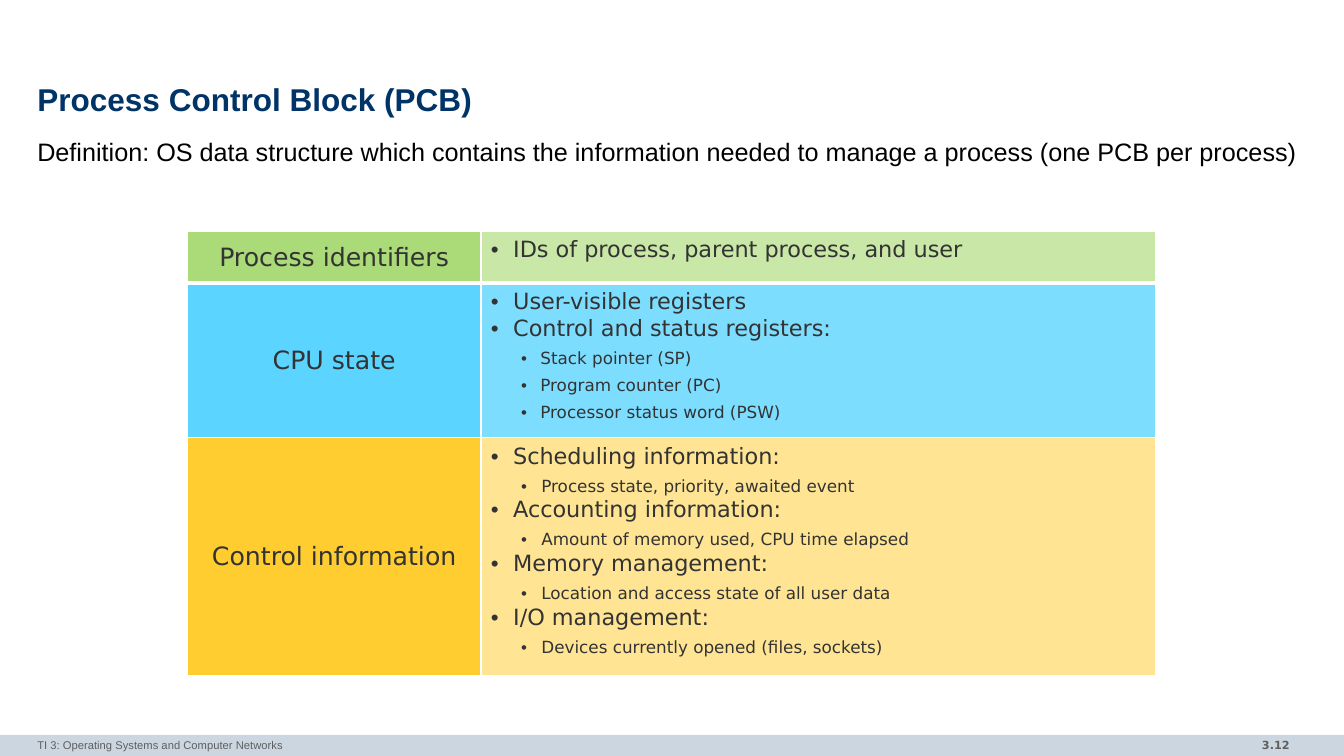
import pptx
import pptx.util
import pptx.dml.color
import pptx.enum.shapes
import pptx.enum.text
import pptx.oxml
import pptx.oxml.ns

ALIGN = pptx.enum.text.PP_ALIGN
ANCHOR = pptx.enum.text.MSO_ANCHOR
WIDE, HIGH = 13.33, 7.5
SANS, TABLE = "Arial", "DejaVu Sans"
INK, GREY, WHITE = "333333", "5F5F5F", "FFFFFF"

# Label, label fill, detail fill, line pitch, sub-item indent, items (level, text)
ROWS = [
    ("Process identifiers", "ABDA78", "C9E7A7", None, 0.49, [
        (0, "IDs of process, parent process, and user")]),
    ("CPU state", "5BD4FF", "7DDDFF", 19.2, 0.49, [
        (0, "User-visible registers"),
        (0, "Control and status registers:"),
        (1, "Stack pointer (SP)"),
        (1, "Program counter (PC)"),
        (1, "Processor status word (PSW)")]),
    ("Control information", "FFCD2F", "FFE593", 19.2, 0.5, [
        (0, "Scheduling information:"),
        (1, "Process state, priority, awaited event"),
        (0, "Accounting information:"),
        (1, "Amount of memory used, CPU time elapsed"),
        (0, "Memory management:"),
        (1, "Location and access state of all user data"),
        (0, "I/O management:"),
        (1, "Devices currently opened (files, sockets)")]),
]
COLS = [2.91, 6.69]
HEIGHTS = [0.51, 1.53, 2.36]


def inch(*sizes):
    return [pptx.util.Inches(size) for size in sizes]


def tint(code):
    return pptx.dml.color.RGBColor.from_string(code)


def paint(shape, code):
    shape.fill.solid()
    shape.fill.fore_color.rgb = tint(code)


def style(item, **form):
    for key, value in form.items():
        setattr(item, key, value)


def write(para, text, size, face, code, bold=False, **form):
    run = para.add_run()
    run.text = text
    style(run.font, size=pptx.util.Pt(size), name=face, bold=bold)
    run.font.color.rgb = tint(code)
    style(para, **form)


def label(slide, box, text, pads, anchor, *look, **form):
    """Place one line of text in a box with pads left, top, right, bottom."""
    frame = slide.shapes.add_textbox(*inch(*box)).text_frame
    left, top, right, bottom = inch(*pads)
    style(frame, word_wrap=True, vertical_anchor=anchor, margin_left=left,
          margin_top=top, margin_right=right, margin_bottom=bottom)
    write(frame.paragraphs[0], text, *look, **form)


def bullet(para, left, hang):
    props = para._p.get_or_add_pPr()
    props.set("marL", str(pptx.util.Inches(left)))
    props.set("indent", str(-pptx.util.Inches(hang)))
    mark = pptx.oxml.ns.nsdecls("a")
    for tag in ('buFont %s typeface="Arial"', 'buChar %s char="•"'):
        props.append(pptx.oxml.parse_xml("<a:" + tag % mark + "/>"))


def border(cell, **widths):
    """Draw white cell borders, with widths in points keyed by side."""
    props = cell._tc.get_or_add_tcPr()
    for spot, (side, width) in enumerate(widths.items()):
        props.insert(spot, pptx.oxml.parse_xml(
            f'<a:ln{side} {pptx.oxml.ns.nsdecls("a")} w="{pptx.util.Pt(width)}">'
            f'<a:solidFill><a:srgbClr val="{WHITE}"/></a:solidFill></a:ln{side}>'))


def header(slide, box):
    left, top, width, height = box
    pads = (0, 0, 0, 0)
    label(slide, (left, top, width, 0.47), "Process Control Block (PCB)",
          pads, ANCHOR.MIDDLE, 22.5, SANS, "003366", True, line_spacing=0.85)
    label(slide, (left, top + 0.57, width, height - 0.57),
          "Definition: OS data structure which contains the information needed "
          "to manage a process (one PCB per process)",
          pads, ANCHOR.TOP, 18, SANS, "000000", line_spacing=1.02)


def details(frame, items, pitch, deep):
    for num, (level, text) in enumerate(items):
        para = frame.add_paragraph() if num else frame.paragraphs[0]
        bullet(para, deep if level else 0.22, deep - 0.3 if level else 0.22)
        write(para, text, 12 if level else 16, TABLE, INK,
              level=level, alignment=ALIGN.LEFT)
        if pitch:
            para.line_spacing = pptx.util.Pt(pitch)


def block(slide, box):
    """Build the table of process data."""
    grid = slide.shapes.add_table(len(ROWS), len(COLS), *inch(*box)).table
    style(grid, first_row=False, horz_banding=False)
    for col, width in zip(grid.columns, inch(*COLS)):
        col.width = width
    for row, height in zip(grid.rows, inch(*HEIGHTS)):
        row.height = height
    for num, (name, dark, light, pitch, deep, items) in enumerate(ROWS):
        head, body = grid.cell(num, 0), grid.cell(num, 1)
        for cell, fill in ((head, dark), (body, light)):
            paint(cell, fill)
            border(cell, L=1, R=1, T=3 if num == 1 else 1,
                   B=3 if num == 0 else 1)
        head.vertical_anchor = ANCHOR.MIDDLE
        write(head.text_frame.paragraphs[0], name, 18, TABLE, INK,
              alignment=ALIGN.CENTER)
        details(body.text_frame, items, pitch, deep)


def footer(slide, box):
    left, top, width, height = box
    bar = slide.shapes.add_shape(
        pptx.enum.shapes.MSO_SHAPE.RECTANGLE, *inch(*box))
    bar.shadow.inherit = False
    paint(bar, "CCD6E0")
    bar.line.fill.background()
    label(slide, (left + 11.1, top - 0.01, 1.79, 0.23), "3.12",
          (0.1, 0.05, 0.1, 0.05), ANCHOR.MIDDLE, 8, TABLE, GREY, True,
          alignment=ALIGN.RIGHT)
    label(slide, (left + 0.37, top - 0.01, 8.72, 0.22),
          "TI 3: Operating Systems and Computer Networks",
          (0, 0.05, 0, 0.05), ANCHOR.TOP, 8, SANS, GREY)


def main():
    deck = pptx.Presentation()
    deck.slide_width, deck.slide_height = inch(WIDE, HIGH)
    slide = deck.slides.add_slide(deck.slide_layouts[6])
    footer(slide, (0, HIGH - 0.21, WIDE, 0.21))
    header(slide, (0.37, 0.78, 12.6, 6.31))
    block(slide, (1.86, 2.3, sum(COLS), sum(HEIGHTS)))
    deck.save("out.pptx")


if __name__ == "__main__":
    main()
